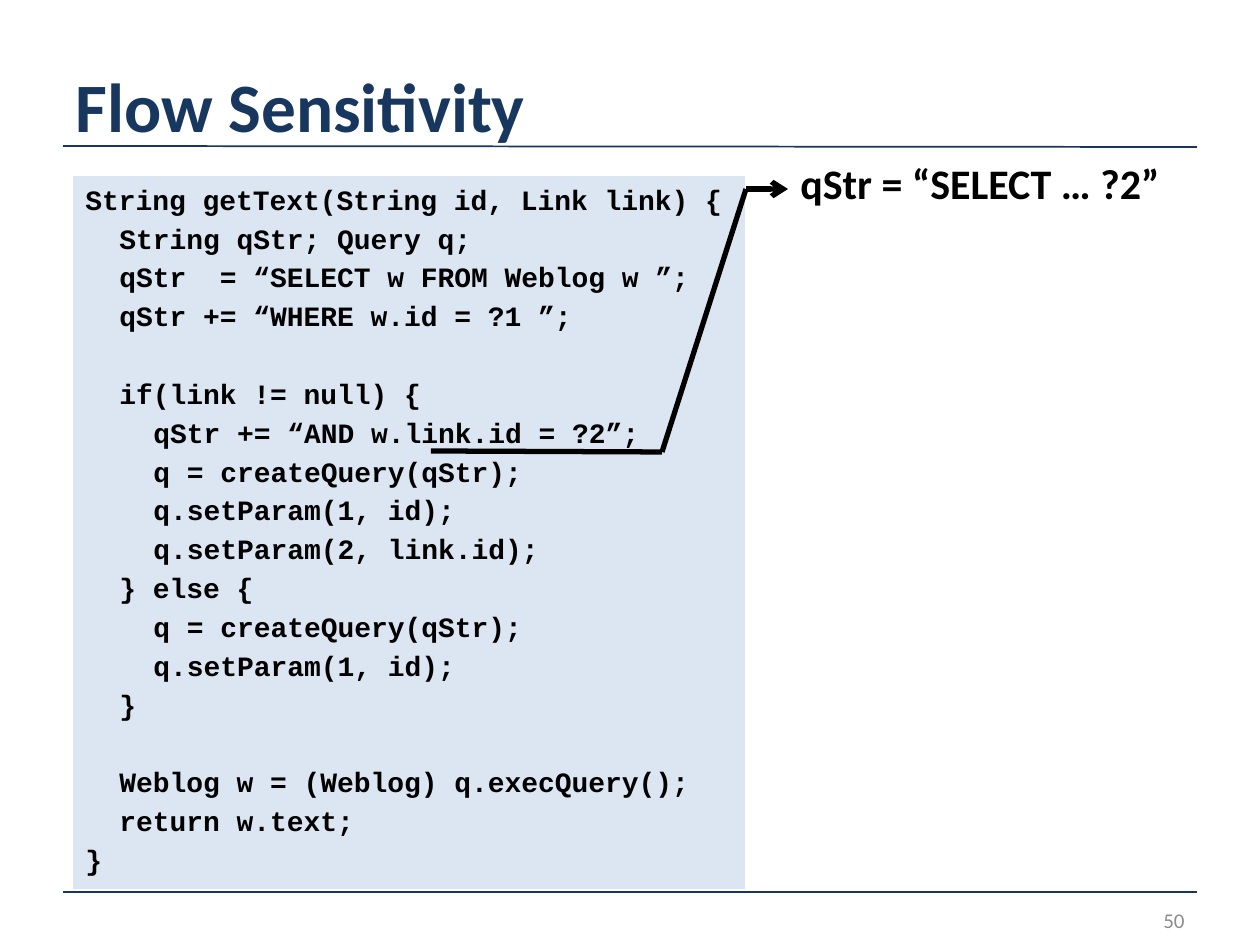
import pptx
import pptx.dml.color
import pptx.enum.shapes
import pptx.enum.text
import pptx.oxml.ns
import pptx.util
from lxml import etree

EMU_PER_PX = 914400 / 126
NAVY = pptx.dml.color.RGBColor(0x17, 0x37, 0x5E)
PALE_BLUE = pptx.dml.color.RGBColor(0xDC, 0xE6, 0xF2)
BLACK = pptx.dml.color.RGBColor(0, 0, 0)
GRAY = pptx.dml.color.RGBColor(0x8C, 0x8C, 0x8C)
ALIGN = pptx.enum.text.PP_ALIGN
ANCHOR = pptx.enum.text.MSO_ANCHOR

INDENT_PX = 34
LINE_GAP_PT = 3
BLANK_LINE_PT = 22.2
CODE = [
    (0, "String getText(String id, Link link) {"),
    (1, "String qStr; Query q;"),
    (1, "qStr  = “SELECT w FROM Weblog w ”;"),
    (1, "qStr += “WHERE w.id = ?1 ”;"),
    None,
    (1, "if(link != null) {"),
    (2, "qStr += “AND w.link.id = ?2”;"),
    (2, "q = createQuery(qStr);"),
    (2, "q.setParam(1, id);"),
    (2, "q.setParam(2, link.id);"),
    (1, "} else {"),
    (2, "q = createQuery(qStr);"),
    (2, "q.setParam(1, id);"),
    (1, "}"),
    None,
    (1, "Weblog w = (Weblog) q.execQuery();"),
    (1, "return w.text;"),
    (0, "}"),
]


def px(length):
    """Turn whole px into EMU."""
    return pptx.util.Emu(round(length * EMU_PER_PX))


def add_span(para, text, size, color, font="Calibri", bold=True, align=ALIGN.LEFT,
             before=0, indent=0):
    """Write one formatted span into a paragraph."""
    para.alignment = align
    para.space_before = pptx.util.Pt(before)
    if indent:
        properties = para._p.get_or_add_pPr()
        properties.set("marL", str(px(indent)))
        properties.set("indent", "0")
    span = para.add_run()
    span.text = text
    span.font.name = font
    span.font.size = pptx.util.Pt(size)
    span.font.bold = bold
    span.font.color.rgb = color


def add_text(shapes, box, text, size, color, anchor=ANCHOR.MIDDLE, wrap=True, **style):
    """Place a single-paragraph text box."""
    frame = shapes.add_textbox(*map(px, box)).text_frame
    frame.word_wrap = wrap
    frame.vertical_anchor = anchor
    add_span(frame.paragraphs[0], text, size, color, **style)


def add_line(shapes, start, end, color, width, arrow=False):
    """Draw a straight connector, with an arrowhead at its end if asked."""
    line = shapes.add_connector(pptx.enum.shapes.MSO_CONNECTOR.STRAIGHT,
                                *map(px, (*start, *end)))
    line.line.color.rgb = color
    line.line.width = pptx.util.Pt(width)
    if arrow:
        etree.SubElement(line.line._get_or_add_ln(),
                         pptx.oxml.ns.qn("a:tailEnd"), type="arrow")
    etree.SubElement(line._element.spPr, pptx.oxml.ns.qn("a:effectLst"))


def add_header(page, box):
    """Place the title above its rule."""
    left, top, width, height = box
    add_text(page.shapes, box, "Flow Sensitivity", 39.6, NAVY)
    bottom = top + height
    add_line(page.shapes, (left, bottom - 1), (left + width, bottom), NAVY, 1)


def add_footer(page, box):
    """Place the bottom rule and the page number."""
    left, top, width, height = box
    right = left + width
    add_line(page.shapes, (left, top), (right, top), NAVY, 1)
    add_text(page.shapes, (right - 294, top + 3, 294, height - 3), "50", 12, GRAY,
             bold=False, align=ALIGN.RIGHT)


def add_code(page, box):
    """Place the code listing on its pale panel."""
    panel = page.shapes.add_shape(pptx.enum.shapes.MSO_SHAPE.RECTANGLE, *map(px, box))
    panel.shadow.inherit = False
    panel.fill.solid()
    panel.fill.fore_color.rgb = PALE_BLUE
    panel.line.fill.background()
    frame = panel.text_frame
    frame.word_wrap = True
    frame.vertical_anchor = ANCHOR.TOP
    para, before = frame.paragraphs[0], LINE_GAP_PT
    for row in CODE:
        if row is None:
            before += BLANK_LINE_PT
            continue
        level, text = row
        add_span(para, text, 16, BLACK, font="Courier New", before=before,
                 indent=level * INDENT_PX)
        if row is not CODE[-1]:
            para, before = frame.add_paragraph(), LINE_GAP_PT


def add_callout(page, box):
    """Underline a code value and lead from it to its label."""
    left, top, width, height = box
    shapes = page.shapes.add_group_shape().shapes
    bend = (left + 315, top + 38)
    corner = (left + 231, top + height)
    label_left = left + 357
    add_line(shapes, bend, (label_left, top + 38), BLACK, 3, arrow=True)
    add_line(shapes, (left, top + height - 1), corner, BLACK, 3)
    add_text(shapes, (label_left, top, width - 357, 63), "qStr = “SELECT … ?2”", 24,
             BLACK, anchor=ANCHOR.TOP, wrap=False)
    add_line(shapes, bend, corner, BLACK, 3)


def main():
    """Build the slide and save it."""
    deck = pptx.Presentation()
    deck.slide_width, deck.slide_height = px(1260), px(945)
    page = deck.slides.add_slide(deck.slide_layouts[6])
    add_header(page, (63, 63, 1134, 84))
    add_footer(page, (63, 892, 1134, 53))
    add_code(page, (73, 176, 672, 713))
    add_callout(page, (431, 151, 745, 301))
    deck.save("out.pptx")


if __name__ == "__main__":
    main()
